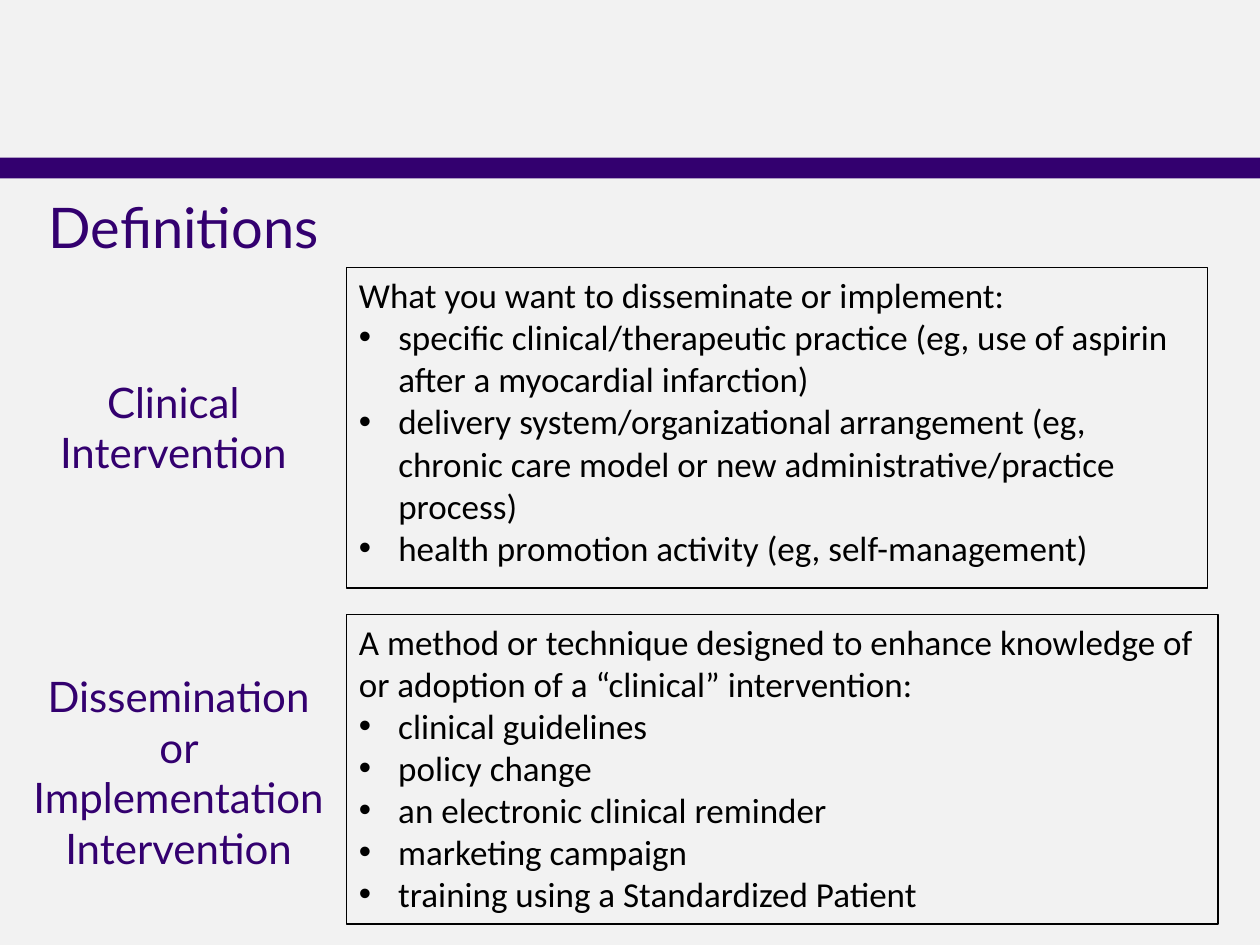
from lxml.etree import SubElement
from pptx import Presentation
from pptx.dml.color import RGBColor
from pptx.enum.shapes import MSO_SHAPE
from pptx.enum.text import MSO_ANCHOR, PP_ALIGN
from pptx.oxml.ns import qn
from pptx.util import Pt

PURPLE, BLACK, BACKGROUND = "33006F", "000000", "F2F2F2"
HEADING_FONT, BODY_FONT = "Lato", "Calibri"
INDENT = 22.5
DEFINITION_LEFT = 198

TITLE = "Definitions"
DEFINITIONS = [
    {
        "label": ["Clinical", "Intervention"],
        "label_area": (18, 216, 162, 56),
        "lead": "What you want to disseminate or implement:",
        "bullets": [
            "specific clinical/therapeutic practice (eg, use of aspirin after a myocardial infarction)",
            "delivery system/organizational arrangement (eg, chronic care model or new administrative/practice process)",
            "health promotion activity (eg, self-management)",
        ],
        "top": 153, "width": 492, "height": 183,
    },
    {
        "label": ["Dissemination or Implementation Intervention"],
        "label_area": (6, 378, 192, 126),
        "lead": "A method or technique designed to enhance knowledge of or adoption of a “clinical” intervention:",
        "bullets": [
            "clinical guidelines",
            "policy change",
            "an electronic clinical reminder",
            "marketing campaign",
            "training using a Standardized Patient",
        ],
        "top": 351, "width": 498, "height": 177,
    },
]


def color(value):
    return RGBColor.from_string(value)


def add_bullet(para):
    properties = para._p.get_or_add_pPr()
    properties.set("marL", str(Pt(INDENT)))
    properties.set("indent", str(-Pt(INDENT)))
    SubElement(properties, qn("a:buFont")).set("typeface", "Arial")
    SubElement(properties, qn("a:buChar")).set("char", "•")


def write(frame, lines, size, font, ink, align, anchor, first_bullet=None):
    frame.word_wrap = True
    frame.vertical_anchor = anchor
    for index, line in enumerate(lines):
        para = frame.add_paragraph() if index else frame.paragraphs[0]
        para.alignment = align
        if first_bullet is not None and index >= first_bullet:
            add_bullet(para)
        span = para.add_run()
        span.text = line
        span.font.size = Pt(size)
        span.font.name = font
        span.font.color.rgb = color(ink)


def write_heading(frame, lines, size):
    write(frame, lines, size, HEADING_FONT, PURPLE, PP_ALIGN.CENTER, MSO_ANCHOR.MIDDLE)


def add_rectangle(page, left, top, width, height):
    box = page.shapes.add_shape(
        MSO_SHAPE.RECTANGLE, Pt(left), Pt(top), Pt(width), Pt(height))
    box.shadow.inherit = False
    return box


def add_definition(page, entry):
    label = page.shapes.add_textbox(*map(Pt, entry["label_area"]))
    label.text_frame.margin_left = label.text_frame.margin_right = Pt(10)
    write_heading(label.text_frame, entry["label"], 24)

    box = add_rectangle(
        page, DEFINITION_LEFT, entry["top"], entry["width"], entry["height"])
    box.fill.background()
    box.line.color.rgb = color(BLACK)
    box.line.width = Pt(0.75)
    write(box.text_frame, [entry["lead"], *entry["bullets"]], 20, BODY_FONT,
          BLACK, PP_ALIGN.LEFT, MSO_ANCHOR.TOP, first_bullet=1)


def main():
    deck = Presentation()
    deck.slide_width, deck.slide_height = Pt(720), Pt(540)
    page = deck.slides.add_slide(deck.slide_layouts[5])
    page.background.fill.solid()
    page.background.fill.fore_color.rgb = color(BACKGROUND)

    band = add_rectangle(page, 0, 90, 720, 12)
    band.fill.solid()
    band.fill.fore_color.rgb = color(PURPLE)
    band.line.fill.background()

    title = page.shapes.title
    title.left, title.top, title.width, title.height = map(Pt, (6, 102, 198, 54))
    write_heading(title.text_frame, [TITLE], 32)

    for entry in DEFINITIONS:
        add_definition(page, entry)
    deck.save("out.pptx")


if __name__ == "__main__":
    main()
